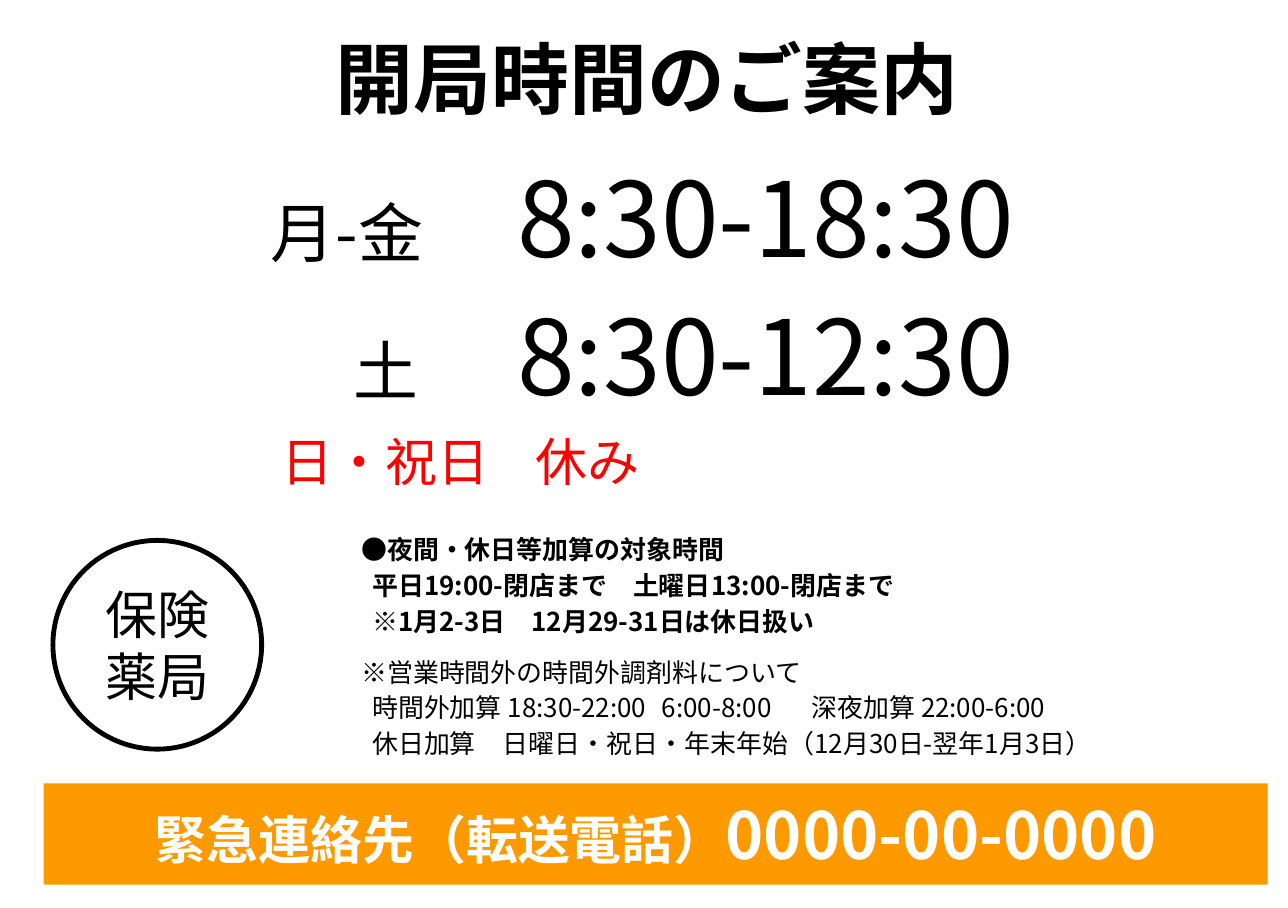
"""Build a pharmacy notice showing its opening hours."""
from lxml import etree
from pptx import Presentation
from pptx.dml.color import RGBColor
from pptx.enum.shapes import MSO_SHAPE
from pptx.enum.text import MSO_ANCHOR, PP_ALIGN
from pptx.oxml.ns import qn
from pptx.util import Inches, Pt

BLACK = RGBColor(0x00, 0x00, 0x00)
WHITE = RGBColor(0xFF, 0xFF, 0xFF)
RED = RGBColor(0xFF, 0x00, 0x00)
ORANGE = RGBColor(0xFF, 0x99, 0x00)
LEFT, CENTER = PP_ALIGN.LEFT, PP_ALIGN.CENTER
TOP, MIDDLE = MSO_ANCHOR.TOP, MSO_ANCHOR.MIDDLE
RECTANGLE, OVAL = MSO_SHAPE.RECTANGLE, MSO_SHAPE.OVAL


class Notice:
    font = "Noto Sans CJK JP"

    def __init__(self, slide):
        self.slide = slide

    def text_box(self, box, anchor, left_inset=0.07):
        area = self.slide.shapes.add_textbox(*map(Inches, box))
        return self.frame(area, anchor, 0.07, left_inset)

    def panel(self, kind, box, fill=None, line=None):
        panel = self.slide.shapes.add_shape(kind, *map(Inches, box))
        panel.shadow.inherit = False
        if fill is None:
            panel.fill.background()
        else:
            panel.fill.solid()
            panel.fill.fore_color.rgb = fill
        if line is None:
            panel.line.fill.background()
        else:
            panel.line.color.rgb = line
            panel.line.width = Pt(2.25)
        return self.frame(panel, MIDDLE, 0.1, 0.1)

    def frame(self, shape, anchor, inset, left_inset):
        frame = shape.text_frame
        frame.word_wrap = True
        frame.vertical_anchor = anchor
        frame.margin_left = Inches(left_inset)
        frame.margin_top = frame.margin_right = frame.margin_bottom = Inches(inset)
        return frame

    def paragraph(self, frame, runs, align=LEFT, color=BLACK, bold=False,
                  before=0, after=0, spacing=1.0, tabs=()):
        first = frame.paragraphs[0]
        paragraph = frame.add_paragraph() if first.runs else first
        paragraph.alignment = align
        paragraph.line_spacing = spacing
        paragraph.space_before = Pt(before)
        paragraph.space_after = Pt(after)
        if tabs:
            stops = etree.SubElement(paragraph._p.get_or_add_pPr(), qn("a:tabLst"))
            for stop in tabs:
                etree.SubElement(stops, qn("a:tab"), pos=str(Inches(stop)), algn="l")
        for text, size in runs:
            run = paragraph.add_run()
            run.text = text
            run.font.size = Pt(size)
            run.font.bold = bold
            run.font.color.rgb = color
            run.font.name = self.font
            etree.SubElement(run._r.get_or_add_rPr(), qn("a:ea"), typeface=self.font)


def main():
    deck = Presentation()
    deck.slide_width, deck.slide_height = Inches(8.27), Inches(5.83)
    notice = Notice(deck.slides.add_slide(deck.slide_layouts[6]))

    surcharges = notice.text_box((1.97, 3.33, 6.07, 1.61), MIDDLE, 0.35)
    for text, bold, before, tabs in (
        ("●夜間・休日等加算の対象時間", True, 0, ()),
        ("\t平日19:00-閉店まで　土曜日13:00-閉店まで", True, 0, (0.07,)),
        ("\t※1月2-3日　12月29-31日は休日扱い", True, 0, (0.07,)),
        ("※営業時間外の時間外調剤料について", False, 7, ()),
        ("\t時間外加算 18:30-22:00\t6:00-8:00\t深夜加算 22:00-6:00", False, 0,
         (0.07, 1.93, 2.89)),
        ("\t休日加算\t日曜日・祝日・年末年始（12月30日-翌年1月3日）", False, 0,
         (0.07, 0.91)),
    ):
        notice.paragraph(surcharges, [(text, 12)], bold=bold, before=before,
                         spacing=1.15, tabs=tabs)

    title = notice.text_box((0.28, 0.14, 7.75, 0.71), MIDDLE)
    notice.paragraph(title, [("開局時間のご案内", 36)], CENTER, bold=True, after=6)

    emergency = notice.panel(RECTANGLE, (0.28, 5.03, 7.86, 0.65), fill=ORANGE)
    notice.paragraph(emergency, [("緊急連絡先（転送電話）", 24), ("0000-00-0000", 30)],
                     CENTER, WHITE, bold=True)

    hours = notice.text_box((1.67, 0.92, 5.1, 2.34), TOP)
    notice.paragraph(hours, [("月-金\t", 30), ("8:30-18:30", 48)], tabs=(1.58,))
    notice.paragraph(hours, [("\t土\t", 30), ("8:30-12:30", 48)], before=6,
                     tabs=(0.53, 1.58))
    notice.paragraph(hours, [("\t日・祝日\t休み", 24)], color=RED, before=6, after=6,
                     tabs=(0.07, 1.7))

    badge = notice.panel(OVAL, (0.34, 3.47, 1.34, 1.34), line=BLACK)
    for word in ("保険", "薬局"):
        notice.paragraph(badge, [(word, 24)], CENTER)

    deck.save("out.pptx")


if __name__ == "__main__":
    main()
